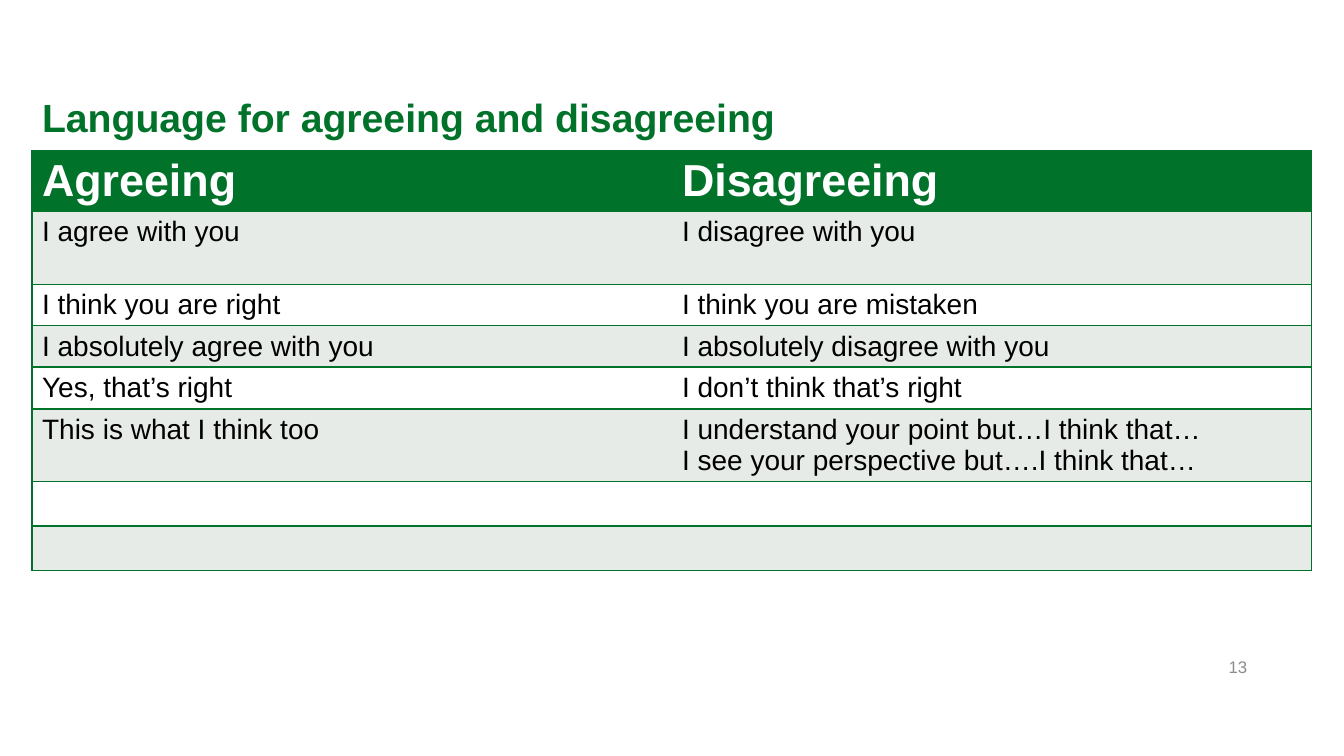
from lxml.etree import SubElement as Sub
from pptx import Presentation
from pptx.dml.color import RGBColor as RGB
from pptx.enum.text import MSO_ANCHOR as Anchor, MSO_AUTO_SIZE as Fit, PP_ALIGN as Align
from pptx.oxml.ns import qn
from pptx.util import Pt

GREEN = RGB(0x00, 0x72, 0x29)
PALE = RGB(0xE7, 0xEB, 0xE8)
WHITE = RGB(0xFF, 0xFF, 0xFF)
BLACK = RGB(0, 0, 0)
GREY = RGB(0x8C, 0x8C, 0x8C)

ROWS = [
    ("Agreeing", "Disagreeing"),
    ("I agree with you", "I disagree with you"),
    ("I think you are right", "I think you are mistaken"),
    ("I absolutely agree with you", "I absolutely disagree with you"),
    ("Yes, that’s right", "I don’t think that’s right"),
    ("This is what I think too",
     "I understand your point but…I think that…\nI see your perspective but….I think that…"),
    ("", ""),
    ("", ""),
]
HEIGHTS = [60, 73, 41, 41, 42, 72, 42, 41]


def px(n):
    return round(n * 914400 / 100.8)


class Deck:
    """Holds the style and the current slide, and draws each kind of element."""

    font = "Arial"

    def __init__(self, wide, high):
        self.prs = Presentation()
        self.prs.slide_width, self.prs.slide_height = px(wide), px(high)
        self.slide = self.prs.slides.add_slide(self.prs.slide_layouts[5])

    def put(self, frame, text, size, color, bold=False, align=Align.LEFT):
        for i, line in enumerate(text.split("\n")):
            para = frame.add_paragraph() if i else frame.paragraphs[0]
            para.alignment = align
            para.font.size = Pt(size)
            if line:
                run = para.add_run()
                run.text = line
                font = run.font
                font.name, font.size, font.bold = self.font, Pt(size), bold
                font.color.rgb = color

    def title(self, text, x, y, w, h):
        shape = self.slide.shapes.title
        shape.left, shape.top, shape.width, shape.height = map(px, (x, y, w, h))
        frame = shape.text_frame
        frame.auto_size = Fit.NONE
        frame.vertical_anchor = Anchor.MIDDLE
        self.put(frame, text, 28, GREEN, True)

    def label(self, text, x, y, w, h):
        frame = self.slide.shapes.add_textbox(*map(px, (x, y, w, h))).text_frame
        frame.word_wrap = True
        frame.vertical_anchor = Anchor.MIDDLE
        self.put(frame, text, 12, GREY, align=Align.CENTER)

    def edge(self, cell, side, shown):
        line = Sub(cell._tc.get_or_add_tcPr(), qn(f"a:ln{side}"), w=str(Pt(1)))
        if shown:
            fill = Sub(line, qn("a:solidFill"))
            Sub(fill, qn("a:srgbClr"), val=str(GREEN))
        else:
            Sub(line, qn("a:noFill"))

    def table(self, rows, highs, x, y, w):
        cols = len(rows[0])
        grid = self.slide.shapes.add_table(
            len(rows), cols, px(x), px(y), px(w), px(sum(highs))).table
        for r, texts in enumerate(rows):
            grid.rows[r].height = px(highs[r])
            for c, text in enumerate(texts):
                cell = grid.cell(r, c)
                for side in "LRTB":
                    inner = side == "L" and c > 0 or side == "R" and c < cols - 1
                    self.edge(cell, side, not inner)
                cell.fill.solid()
                cell.fill.fore_color.rgb = GREEN if r == 0 else PALE if r % 2 else WHITE
                if r == 0:
                    self.put(cell.text_frame, text, 32, WHITE, True)
                else:
                    self.put(cell.text_frame, text, 20, BLACK)


def main():
    deck = Deck(1344, 756)
    deck.title("Language for agreeing and disagreeing", 32, 93, 1279, 47)
    deck.table(ROWS, HEIGHTS, 32, 151, 1280)
    deck.label("13", 1208, 647, 60, 40)
    deck.prs.save("out.pptx")


if __name__ == "__main__":
    main()
